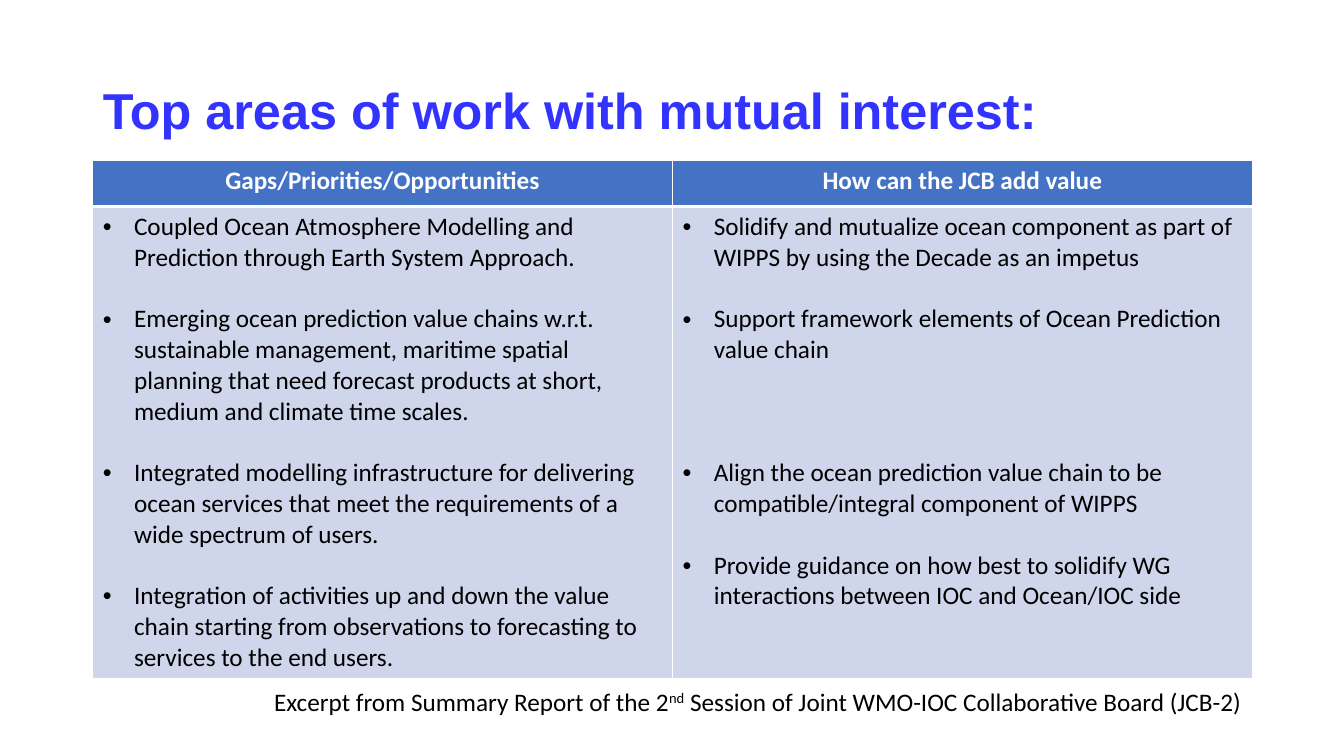
from dataclasses import dataclass

from lxml.etree import SubElement
from pptx import Presentation
from pptx.dml.color import RGBColor
from pptx.enum.text import MSO_ANCHOR, MSO_AUTO_SIZE, PP_ALIGN
from pptx.oxml.ns import qn
from pptx.util import Inches, Pt

WHITE = "FFFFFF"
BLACK = "000000"
HEADER_BLUE = "4472C4"
BODY_BLUE = "CFD5EA"
TITLE_BLUE = "3333FF"
LINE_HEIGHT = 22


@dataclass(frozen=True)
class Item:
    text: str
    lines_before: int = 1


@dataclass(frozen=True)
class Column:
    heading: str
    items: tuple[Item, ...]


COLUMNS = (
    Column("Gaps/Priorities/Opportunities", (
        Item("Coupled Ocean Atmosphere Modelling and Prediction through Earth System Approach.", 0),
        Item("Emerging ocean prediction value chains w.r.t. sustainable management, maritime spatial "
             "planning that need forecast products at short, medium and climate time scales."),
        Item("Integrated modelling infrastructure for delivering ocean services that meet the "
             "requirements of a wide spectrum of users."),
        Item("Integration of activities up and down the value chain starting from observations to "
             "forecasting to services to the end users."),
    )),
    Column("How can the JCB add value", (
        Item("Solidify and mutualize ocean component as part of WIPPS by using the Decade as an impetus", 0),
        Item("Support framework elements of Ocean Prediction value chain"),
        Item("Align the ocean prediction value chain to be compatible/integral component of WIPPS", 3),
        Item("Provide guidance on how best to solidify WG interactions between IOC and Ocean/IOC side"),
    )),
)


def color(value: str) -> RGBColor:
    return RGBColor.from_string(value)


def add_span(para, text: str, fill: str, size: float = 18, name: str = "Calibri", bold: bool = False):
    span = para.add_run()
    span.text = text
    font = span.font
    font.name, font.size, font.bold = name, Pt(size), bold
    font.color.rgb = color(fill)
    return span


def style_cell(cell, fill: str, top: float, bottom: float) -> None:
    properties = cell._tc.get_or_add_tcPr()
    for side, width in (("L", 1), ("R", 1), ("T", top), ("B", bottom)):
        line = SubElement(properties, qn(f"a:ln{side}"), w=str(Pt(width)))
        SubElement(SubElement(line, qn("a:solidFill")), qn("a:srgbClr"), val=WHITE)
    cell.fill.solid()
    cell.fill.fore_color.rgb = color(fill)


def add_bullet(para, item: Item) -> None:
    properties = para._p.get_or_add_pPr()
    properties.set("marL", str(Inches(0.31)))
    properties.set("indent", str(Inches(-0.31)))
    SubElement(properties, qn("a:buFont"), typeface="Arial")
    SubElement(properties, qn("a:buChar"), char="•")
    if item.lines_before:
        para.space_before = Pt(item.lines_before * LINE_HEIGHT)
    add_span(para, item.text, BLACK)


def add_title(page) -> None:
    box = page.shapes.title
    box.left, box.top, box.width, box.height = Inches(0.92), Inches(0.4), Inches(11.5), Inches(1.45)
    frame = box.text_frame
    frame.vertical_anchor = MSO_ANCHOR.MIDDLE
    frame.auto_size = MSO_AUTO_SIZE.NONE
    para = frame.paragraphs[0]
    para.alignment = PP_ALIGN.LEFT
    para.line_spacing = 0.9
    add_span(para, "Top areas of work with mutual interest:", TITLE_BLUE, 36, "Arial", True)


def add_areas_table(page) -> None:
    table = page.shapes.add_table(
        2, len(COLUMNS), Inches(0.92), Inches(1.59), Inches(11.5), Inches(5.12)).table
    table.horz_banding = False
    table.rows[0].height = Inches(0.46)
    table.rows[1].height = Inches(4.66)
    for index, column in enumerate(COLUMNS):
        header, body = table.cell(0, index), table.cell(1, index)
        style_cell(header, HEADER_BLUE, 1, 3)
        style_cell(body, BODY_BLUE, 3, 1)
        para = header.text_frame.paragraphs[0]
        para.alignment = PP_ALIGN.CENTER
        add_span(para, column.heading, WHITE, bold=True)
        frame = body.text_frame
        for number, item in enumerate(column.items):
            add_bullet(frame.add_paragraph() if number else frame.paragraphs[0], item)


def add_excerpt(page) -> None:
    box = page.shapes.add_textbox(Inches(2.62), Inches(6.76), Inches(9.98), Inches(0.4))
    frame = box.text_frame
    frame.word_wrap = False
    frame.auto_size = MSO_AUTO_SIZE.SHAPE_TO_FIT_TEXT
    para = frame.paragraphs[0]
    add_span(para, "Excerpt from Summary Report of the 2", BLACK)
    ordinal = add_span(para, "nd", BLACK)
    ordinal._r.get_or_add_rPr().set("baseline", "30000")
    add_span(para, " Session of Joint WMO-IOC Collaborative Board (JCB-2)", BLACK)


def main() -> None:
    deck = Presentation()
    deck.slide_width, deck.slide_height = Inches(13.33), Inches(7.5)
    page = deck.slides.add_slide(deck.slide_layouts.get_by_name("Title Only"))
    add_title(page)
    add_areas_table(page)
    add_excerpt(page)
    deck.save("out.pptx")


if __name__ == "__main__":
    main()
